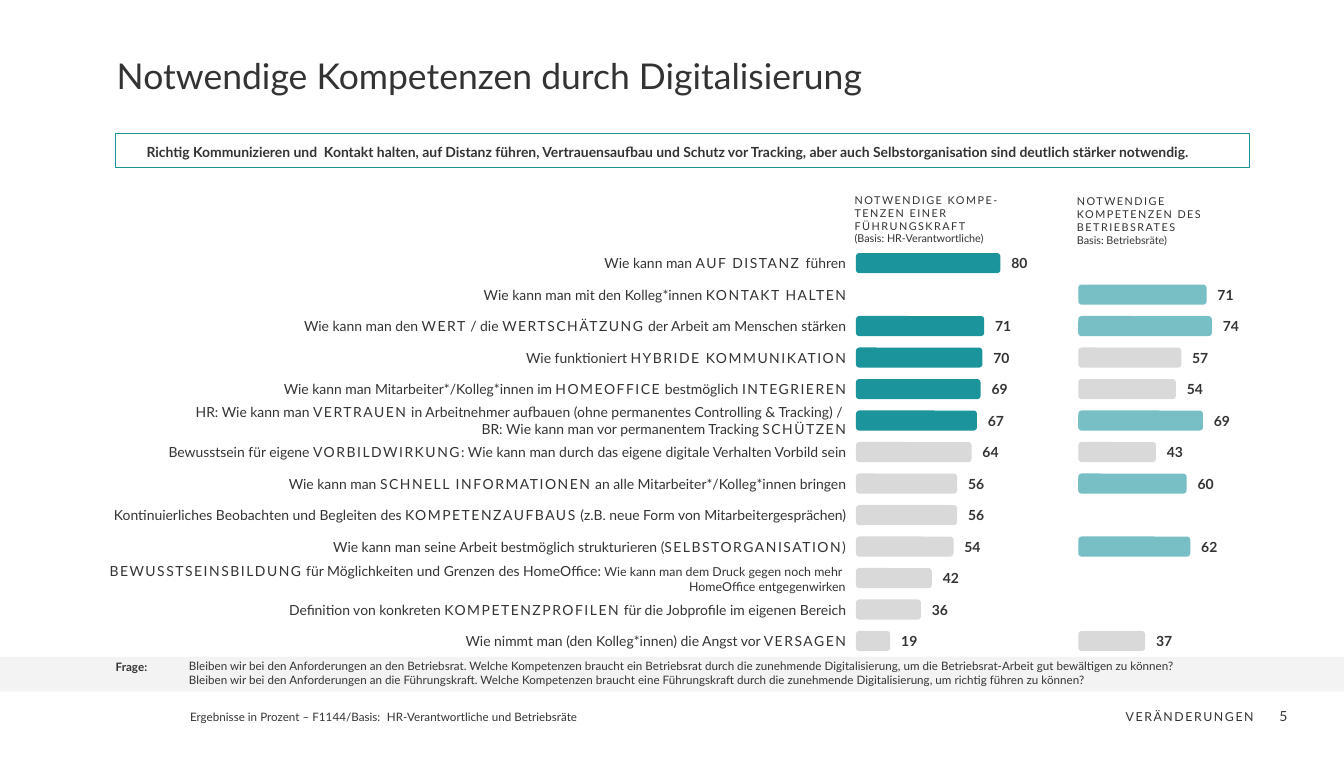
from dataclasses import dataclass
from typing import NamedTuple, Optional

from lxml.etree import SubElement
from pptx import Presentation
from pptx.dml.color import RGBColor
from pptx.enum.shapes import MSO_SHAPE as Form
from pptx.enum.text import MSO_ANCHOR as Anchor, MSO_AUTO_SIZE as Fit, PP_ALIGN as Align
from pptx.oxml.ns import qn
from pptx.shapes.autoshape import Shape
from pptx.slide import Slide
from pptx.text.text import TextFrame
from pptx.util import Pt

INK = RGBColor(0x33, 0x33, 0x33)
TEAL = RGBColor(0x1C, 0x94, 0x9C)
AQUA = RGBColor(0x77, 0xBF, 0xC4)
GREY = RGBColor(0xD9, 0xD9, 0xD9)
PALE = RGBColor(0xF3, 0xF3, 0xF3)

PITCH = 20.4    # distance between rows
FIRST = 170.4   # middle of the first row
UNIT = 1.17     # bar length per percent
THICK = 13      # bar height


class Box(NamedTuple):
    left: float
    top: float
    width: float
    height: float


class Inset(NamedTuple):
    left: float = 7.2
    top: float = 3.6
    right: float = 7.2
    bottom: float = 3.6


NONE = Inset(0, 0, 0, 0)
TIGHT = Inset(0, 0, 7.2, 3.6)


@dataclass
class Style:
    size: float
    bold: bool = False
    align: Align = Align.LEFT
    anchor: Anchor = Anchor.TOP
    inset: Inset = Inset()
    lead: Optional[float] = None


@dataclass
class Group:
    """One column of bars; values from `limit` upwards are shown in `tone`."""
    left: float
    tone: RGBColor
    limit: int
    head: list[str]
    top: float
    width: float


class Row(NamedTuple):
    lines: list[str]
    lead: Optional[int] = None
    board: Optional[int] = None


GROUPS = [
    Group(554.4, TEAL, 67, ["|NOTWENDIGE KOMPE-TENZEN EINER FÜHRUNGSKRAFT|",
                            "(Basis: HR-Verantwortliche)"], 121.7, 113),
    Group(698.4, AQUA, 60, ["|NOTWENDIGE KOMPETENZEN DES BETRIEBSRATES|",
                            "Basis: Betriebsräte)"], 122.4, 105),
]

# Text between bars (|) is letterspaced; text after ^ is one point smaller.
ROWS = [
    Row(["Wie kann man |AUF DISTANZ |führen"], 80),
    Row(["Wie kann man mit den Kolleg*innen |KONTAKT HALTEN|"], None, 71),
    Row(["Wie kann man den |WERT| / die |WERTSCHÄTZUNG| der Arbeit am Menschen stärken"], 71, 74),
    Row(["Wie funktioniert |HYBRIDE KOMMUNIKATION|"], 70, 57),
    Row(["Wie kann man Mitarbeiter*/Kolleg*innen im |HOMEOFFICE| bestmöglich |INTEGRIEREN|"], 69, 54),
    Row(["HR: Wie kann man |VERTRAUEN| in Arbeitnehmer aufbauen "
         "(ohne permanentes Controlling & Tracking) / ",
         "BR: Wie kann man vor permanentem Tracking |SCHÜTZEN|"], 67, 69),
    Row(["Bewusstsein für eigene |VORBILDWIRKUNG|: "
         "Wie kann man durch das eigene digitale Verhalten Vorbild sein"], 64, 43),
    Row(["Wie kann man |SCHNELL INFORMATIONEN| an alle Mitarbeiter*/Kolleg*innen bringen"], 56, 60),
    Row(["Kontinuierliches Beobachten und Begleiten des |KOMPETENZAUFBAUS| "
         "(z.B. neue Form von Mitarbeitergesprächen)"], 56),
    Row(["Wie kann man seine Arbeit bestmöglich strukturieren (|SELBSTORGANISATION|)"], 54, 62),
    Row(["|BEWUSSTSEINSBILDUNG| für Möglichkeiten und Grenzen des HomeOffice: "
         "^Wie kann man dem Druck gegen noch mehr ",
         "^HomeOffice entgegenwirken"], 42),
    Row(["Definition von konkreten |KOMPETENZPROFILEN| für die Jobprofile im eigenen Bereich"], 36),
    Row(["Wie nimmt man (den Kolleg*innen) die Angst vor |VERSAGEN|"], 19, 37),
]


def write(frame: TextFrame, lines: list[str], style: Style) -> None:
    """Fill a frame, turning the | and ^ marks into runs."""
    frame.word_wrap = True
    frame.auto_size = Fit.NONE
    frame.vertical_anchor = style.anchor
    (frame.margin_left, frame.margin_top,
     frame.margin_right, frame.margin_bottom) = map(Pt, style.inset)
    for i, line in enumerate(lines):
        para = frame.add_paragraph() if i else frame.paragraphs[0]
        para.alignment = style.align
        para.space_before = Pt(0)
        if style.lead:
            para.line_spacing = Pt(style.lead)
        main, _, small = line.partition("^")
        for j, part in enumerate(main.split("|")):
            if part:
                run = para.add_run()
                run.text = part
                if j % 2:
                    run.font._element.set("spc", "100")
        if small:
            run = para.add_run()
            run.text = small
            run.font.size = Pt(style.size - 1)
        font = para.font
        font.name, font.size, font.bold = "Lato", Pt(style.size), style.bold
        font.color.rgb = INK


def place(shape: Shape, box: Box) -> None:
    shape.left, shape.top, shape.width, shape.height = map(Pt, box)


def note(slide: Slide, box: Box, lines: list[str], style: Style) -> None:
    """Add a text box."""
    write(slide.shapes.add_textbox(*map(Pt, box)).text_frame, lines, style)


def block(slide: Slide, form: Form, box: Box, fill: Optional[RGBColor],
          line: Optional[RGBColor] = None) -> Shape:
    shape = slide.shapes.add_shape(form, *map(Pt, box))
    shape.shadow.inherit = False
    if fill is None:
        shape.fill.background()
    else:
        shape.fill.solid()
        shape.fill.fore_color.rgb = fill
    if line is None:
        shape.line.fill.background()
    else:
        shape.line.color.rgb = line
        shape.line.width = Pt(0.75)
    return shape


def draw_bar(slide: Slide, group: Group, value: int, mid: float) -> None:
    """Draw one bar with its value to the right."""
    size = value * UNIT
    tone = group.tone if value >= group.limit else GREY
    block(slide, Form.ROUNDED_RECTANGLE, Box(group.left, mid - THICK / 2, size, THICK), tone)
    note(slide, Box(group.left + size, mid - 11, 30, 22), [str(value)],
         Style(9, bold=True, anchor=Anchor.MIDDLE))


def draw_frame(slide: Slide) -> None:
    """Set title, key message, question and footer."""
    band = block(slide, Form.RECTANGLE, Box(0, 425.5, 870.5, 22.5), PALE)
    slide.shapes._spTree.insert(2, band._element)
    title, body = slide.shapes.title, slide.placeholders[1]
    place(title, Box(75.6, 37.4, 668, 29))
    write(title.text_frame, ["Notwendige Kompetenzen durch Digitalisierung"],
          Style(23, inset=TIGHT, lead=25.3))
    place(body, Box(122.4, 427, 687, 20))
    write(body.text_frame, [
        "Bleiben wir bei den Anforderungen an den Betriebsrat. Welche Kompetenzen braucht ein Betriebsrat "
        "durch die zunehmende Digitalisierung, um die Betriebsrat-Arbeit gut bewältigen zu können?",
        "Bleiben wir bei den Anforderungen an die Führungskraft. Welche Kompetenzen braucht eine Führungskraft "
        "durch die zunehmende Digitalisierung, um richtig führen zu können?"],
        Style(7.5, inset=TIGHT))
    for para in body.text_frame.paragraphs:
        props = para._p.get_or_add_pPr()
        props.set("marL", "0")
        props.set("indent", "0")
        mark = SubElement(props, qn("a:buNone"))
        props.find(qn("a:defRPr")).addprevious(mark)
    block(slide, Form.RECTANGLE, Box(74.9, 86.4, 734.4, 22.3), None, TEAL)
    note(slide, Box(95, 87.1, 714, 22.3), [
        "Richtig Kommunizieren und  Kontakt halten, auf Distanz führen, Vertrauensaufbau und Schutz vor "
        "Tracking, aber auch Selbstorganisation sind deutlich stärker notwendig."],
        Style(9, bold=True, anchor=Anchor.MIDDLE, inset=NONE))
    note(slide, Box(74.9, 427.7, 40, 13), ["Frage:"], Style(7.5, bold=True, inset=TIGHT))
    foot = Style(7.5, inset=NONE)
    note(slide, Box(123.1, 460, 127, 10), ["Ergebnisse in Prozent – F1144/Basis:"], foot)
    note(slide, Box(250.6, 460, 284, 10), ["HR-Verantwortliche und Betriebsräte"], foot)
    note(slide, Box(642.2, 456.5, 177.1, 16.6), ["|VERÄNDERUNGEN|"],
         Style(8, align=Align.RIGHT, lead=8.7))
    note(slide, Box(808.6, 455, 25.2, 14.4), ["5"],
         Style(9, align=Align.RIGHT, inset=Inset(7.2, 3.6, 0, 0)))


def main() -> None:
    deck = Presentation()
    deck.slide_width, deck.slide_height = Pt(870.5), Pt(490.3)
    slide = deck.slides.add_slide(deck.slide_layouts[1])
    draw_frame(slide)
    for group in GROUPS:
        note(slide, Box(group.left - 7.9, group.top, group.width, 41), group.head, Style(7))
    label = Style(9, align=Align.RIGHT, anchor=Anchor.MIDDLE)
    for i, row in enumerate(ROWS):
        mid = FIRST + i * PITCH
        note(slide, Box(50, mid - 16, 505, 32), row.lines, label)
        for group, value in zip(GROUPS, (row.lead, row.board)):
            if value is not None:
                draw_bar(slide, group, value, mid)
    deck.save("out.pptx")


if __name__ == "__main__":
    main()
